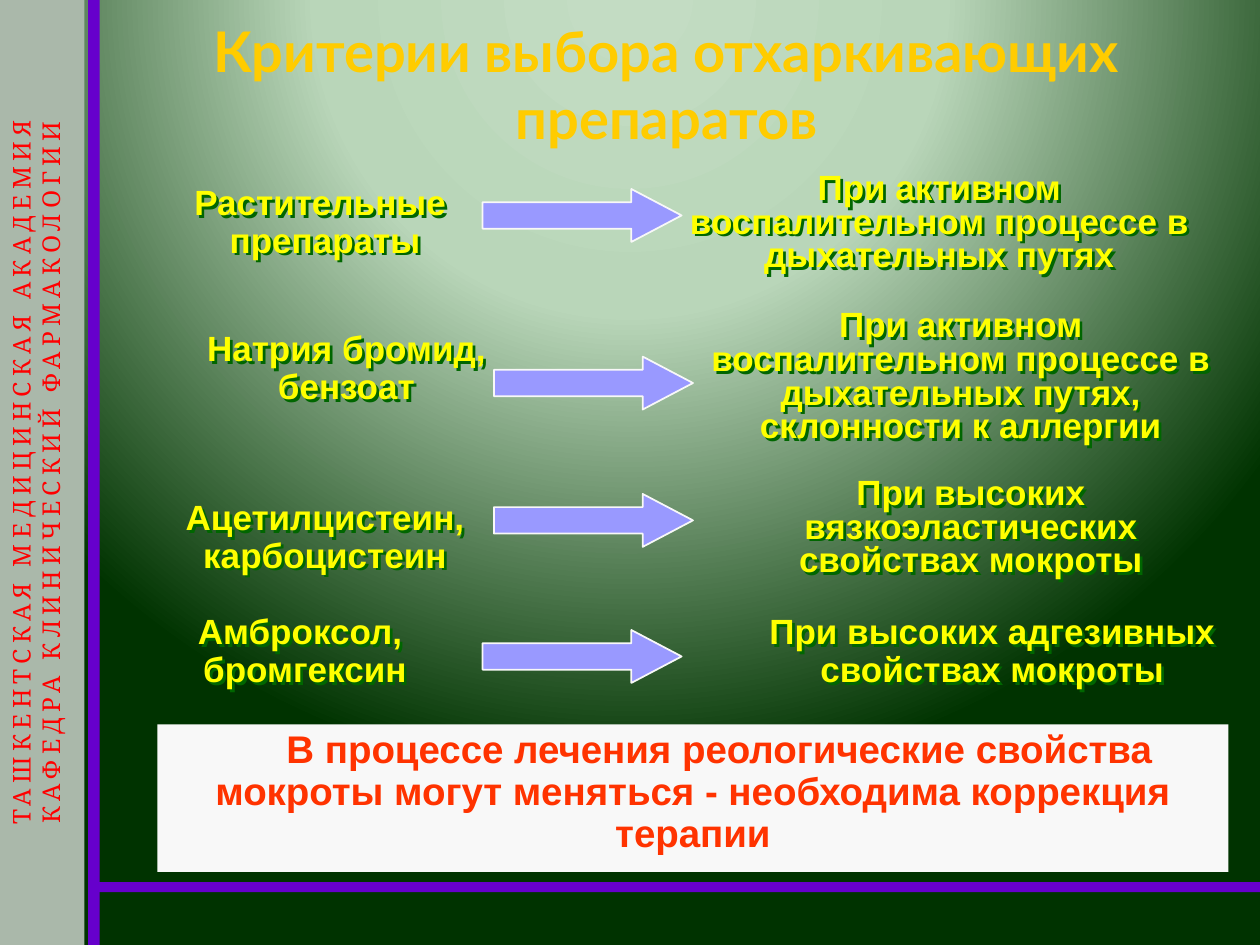
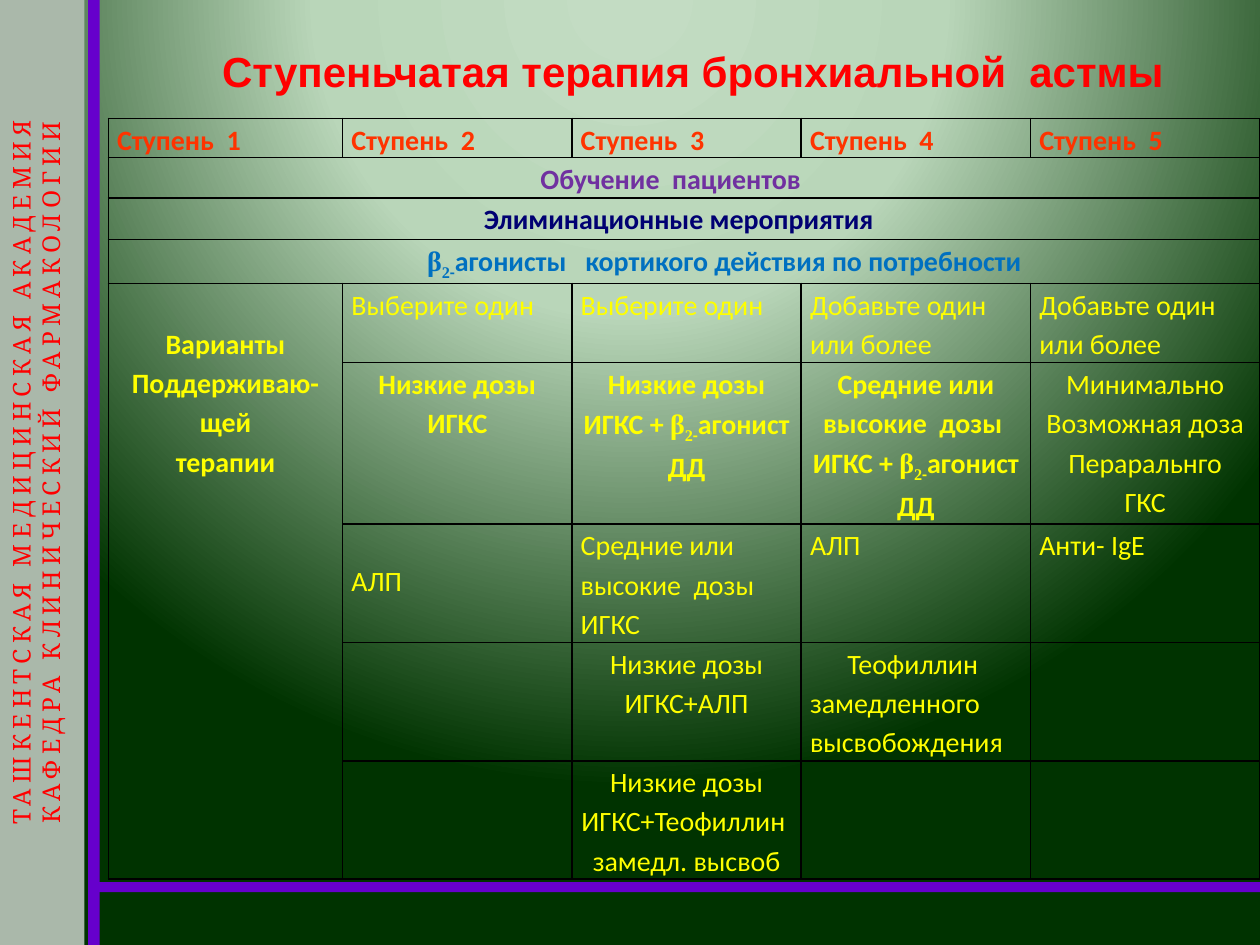
from dataclasses import dataclass

from lxml import etree
from pptx import Presentation
from pptx import util as u
from pptx.dml.color import RGBColor
from pptx.enum import shapes, text
from pptx.oxml import ns

PX = 9144
LEFT, CENTER = text.PP_ALIGN.LEFT, text.PP_ALIGN.CENTER
TOP, MIDDLE = text.MSO_ANCHOR.TOP, text.MSO_ANCHOR.MIDDLE


@dataclass(frozen=True)
class Theme:
    """Colours, fonts and type sizes used on every page."""
    glow: tuple = ((0, "C3DCC3"), (40, "B9D6B9"), (100, "003300"))
    band: str = "6600CC"
    side: str = "AAB8AA"
    red: str = "FF0000"
    outline: str = "F7F7FF"
    gold: str = "FFCC00"
    yellow: str = "FFFF00"
    shadow: str = "006600"
    arrow: str = "9999FF"
    paper: str = "F8F8F8"
    orange: str = "FF3300"
    purple: str = "7030A0"
    navy: str = "000072"
    blue: str = "0070C0"
    black: str = "000000"
    sans: str = "Arial"
    heading: str = "Lato"
    grid: str = "Calibri"
    serif: str = "Times New Roman"
    label: str = "Cambria"
    title_size: int = 32
    subtitle_size: int = 24
    note_size: int = 22
    body_size: int = 20
    cell_size: int = 16
    side_size: int = 14


THEME = Theme()
BETA = [("β", dict(font=THEME.serif)),
        ("2", dict(font=THEME.serif, baseline=-25)), ("-", dict(baseline=-25))]


def px(length):
    """Turn px into EMU."""
    return u.Emu(length * PX)


def node(parent, tag, **attributes):
    """Append a DrawingML element to a parent."""
    return etree.SubElement(parent, ns.qn("a:" + tag),
                            {key: str(value) for key, value in attributes.items()})


def solid(parent, color):
    """Append a solid fill to a parent."""
    node(node(parent, "solidFill"), "srgbClr", val=color)


def style_span(span, size, font, color, bold=False, baseline=0, spacing=0, outline=None):
    """Format one run of text."""
    span.font.size, span.font.name, span.font.bold = u.Pt(size), font, bold
    span.font.color.rgb = RGBColor.from_string(color)
    marks = span.font._element
    if baseline:
        marks.set("baseline", str(baseline * 1000))
    if spacing:
        marks.set("spc", str(spacing * 100))
    if outline:
        line = node(marks, "ln", w=11430)
        solid(line, outline)
        marks.insert(0, line)


def write(frame, paras, align=CENTER, first_align=None, line=None, around=0,
          left=0, indent=0, **look):
    """Fill a text frame with paragraphs of strings or of formatted spans."""
    for index, spans in enumerate(paras):
        para = frame.add_paragraph() if index else frame.paragraphs[0]
        para.alignment = first_align if first_align and not index else align
        if line:
            para.line_spacing = line
        if around:
            para.space_before = para.space_after = u.Pt(around)
        if left or indent:
            marks = para._p.get_or_add_pPr()
            marks.set("marL", str(px(left)))
            marks.set("indent", str(px(indent)))
        for words, changes in [(spans, {})] if isinstance(spans, str) else spans:
            for part, piece in enumerate(words.split("\n")):
                if part:
                    para.add_line_break()
                span = para.add_run()
                span.text = piece
                style_span(span, **{**look, **changes})


def add_text(page, box, paras, anchor=TOP, shadow=None, **look):
    """Place a wrapping text box, with a text shadow if a colour is given."""
    shape = page.shapes.add_textbox(*map(px, box))
    frame = shape.text_frame
    frame.word_wrap, frame.vertical_anchor = True, anchor
    if shadow:
        cast = node(node(shape._element.spPr, "effectLst"), "outerShdw",
                    dist=28000, dir=2700000, algn="ctr", rotWithShape=0)
        node(cast, "srgbClr", val=shadow)
    write(frame, paras, **look)


def add_block(page, kind, box, fill, line=None):
    """Place a filled preset shape without a shadow."""
    shape = page.shapes.add_shape(kind, *map(px, box))
    shape.shadow.inherit = False
    shape.fill.solid()
    shape.fill.fore_color.rgb = RGBColor.from_string(fill)
    if line:
        shape.line.color.rgb = RGBColor.from_string(line)
        shape.line.width = u.Pt(1)
    else:
        shape.line.fill.background()
    return shape


def paint_background(page):
    """Give the page a glow that falls from its top edge."""
    page.background.fill.gradient()
    gradient = next(page._element.iter(ns.qn("a:gradFill")))
    for child in list(gradient):
        gradient.remove(child)
    stops = node(gradient, "gsLst")
    for position, color in THEME.glow:
        node(node(stops, "gs", pos=position * 1000), "srgbClr", val=color)
    node(node(gradient, "path", **{"path": "circle"}), "fillToRect",
         l=50000, t=-80000, r=50000, b=180000)


def draw_bands(page):
    """Draw the upright and the level band."""
    for box in ((70, 0, 9, 750), (75, 700, 925, 8)):
        add_block(page, shapes.MSO_SHAPE.RECTANGLE, box, THEME.band)


def draw_sidebar(page, box):
    """Draw the department label that reads upwards."""
    frame = add_block(page, shapes.MSO_SHAPE.RECTANGLE, box, THEME.side).text_frame
    frame.vertical_anchor, frame.word_wrap = TOP, True
    frame._txBody.bodyPr.set("vert", "vert270")
    write(frame, ["ТАШКЕНТСКАЯ МЕДИЦИНСКАЯ АКАДЕМИЯ", "КАФЕДРА КЛИНИЧЕСКИЙ ФАРМАКОЛОГИИ"],
          size=THEME.side_size, font=THEME.label, color=THEME.red, spacing=3,
          outline=THEME.outline)


def new_page(deck):
    """Add a blank page with the shared background, bands and sidebar."""
    page = deck.slides.add_slide(deck.slide_layouts[6])
    paint_background(page)
    draw_bands(page)
    draw_sidebar(page, (0, 0, 67, 750))
    return page


def draw_choice(page, box, drug, arrow, case):
    """Draw a drug, an arrow and its indication inside one row."""
    x, y, width, height = box
    body = dict(size=THEME.body_size, font=THEME.sans, color=THEME.yellow, bold=True,
                around=4, shadow=THEME.shadow)
    words, dx, dy = drug
    add_text(page, (x + dx, y + dy, 250, 83), [words], line=0.9, **body)
    dx, dy = arrow
    pointer = add_block(page, shapes.MSO_SHAPE.RIGHT_ARROW,
                        (x + dx, y + dy, 158, 42), THEME.arrow, THEME.paper)
    pointer.adjustments[0], pointer.adjustments[1] = 0.5, 0.95
    words, dx, line = case
    add_text(page, (x + dx, y, 425, height), [words], line=line, **body)


def draw_note(page, box):
    """Draw the closing remark on a light panel."""
    frame = add_block(page, shapes.MSO_SHAPE.RECTANGLE, box, THEME.paper).text_frame
    frame.word_wrap, frame.vertical_anchor = True, TOP
    write(frame, ["В процессе лечения реологические свойства мокроты могут меняться - "
                  "необходима коррекция терапии"], line=0.9, around=4, indent=42,
          size=THEME.note_size, font=THEME.sans, color=THEME.orange, bold=True)


def criteria_page(deck):
    """Build the page on choosing expectorants."""
    page = new_page(deck)
    add_text(page, (125, 25, 808, 83), ["Критерии выбора отхаркивающих препаратов"],
             anchor=MIDDLE, size=THEME.title_size, font=THEME.heading,
             color=THEME.gold, bold=True)
    active = "При активном воспалительном процессе в дыхательных путях"
    choices = (
        (133, 100, ("Растительные \nпрепараты", 16, 9), (266, 17), (active, 416, 0.8)),
        (242, 117, ("Натрия бромид, бензоат", 33, 16), (275, 41),
         (active + ", склонности к аллергии", 433, 0.8)),
        (375, 100, ("Ацетилцистеин,\nкарбоцистеин", 16, 17), (275, 17),
         ("При высоких вязкоэластических свойствах мокроты", 441, 0.8)),
        (483, 67, ("Амброксол, \nбромгексин", 0, 0), (266, 17),
         ("При высоких адгезивных свойствах мокроты", 458, 0.9)))
    for y, height, drug, arrow, case in choices:
        draw_choice(page, (117, y, 883, height), drug, arrow, case)
    draw_note(page, (125, 575, 850, 117))


def format_cell(cell):
    """Clear a cell's fill, set its margins and rule its four sides."""
    cell.fill.background()
    cell.margin_left = cell.margin_right = px(7)
    cell.margin_top = cell.margin_bottom = 0
    marks = cell._tc.get_or_add_tcPr()
    for index, side in enumerate(("lnL", "lnR", "lnT", "lnB")):
        line = node(marks, side, w=12700)
        solid(line, THEME.black)
        marks.insert(index, line)


def step_cells():
    """List the table's texts as row, column, paragraphs and format."""
    strong = dict(bold=True, align=CENTER)
    middle = dict(align=CENTER)
    beta_agonist = [(" ", {})] + BETA + [("агонист", {})]
    more = ["Добавьте один", "или более"]
    heads = [(0, step, [f"Ступень  {step + 1}"], dict(color=THEME.orange, bold=True))
             for step in range(5)]
    return heads + [
        (1, 0, ["Обучение  пациентов"], dict(color=THEME.purple, bold=True, left=336)),
        (2, 0, ["Элиминационные мероприятия"], dict(color=THEME.navy, bold=True, left=291)),
        (3, 0, [BETA + [("агонисты   кортикого действия по потребности", {})]],
         dict(color=THEME.blue, bold=True, left=246)),
        (4, 0, ["Варианты", "Поддерживаю-щей", "терапии"], dict(strong, top=31)),
        (4, 1, ["Выберите один"], {}),
        (4, 2, ["Выберите один"], {}),
        (4, 3, more, {}),
        (4, 4, more, {}),
        (5, 1, ["Низкие дозы", "ИГКС"], strong),
        (5, 2, ["Низкие дозы", [("ИГКС +", {})] + beta_agonist, "ДД"], strong),
        (5, 3, [[("Средние или высокие  дозы  ИГКС +", {})] + beta_agonist, "ДД"], strong),
        (5, 4, ["Минимально", "Возможная доза", "Пераральнго", "ГКС"], middle),
        (6, 1, ["АЛП"], dict(top=28)),
        (6, 2, ["Средние или высокие  дозы  ИГКС"], {}),
        (6, 3, ["АЛП"], {}),
        (6, 4, ["Анти- IgЕ"], {}),
        (7, 2, ["Низкие дозы", "ИГКС+АЛП"], middle),
        (7, 3, ["Теофиллин ", "замедленного", "высвобождения"], dict(first_align=CENTER)),
        (8, 2, ["Низкие дозы", "ИГКС+Теофиллин ", "замедл. высвоб"], middle)]


def draw_steps(page, box):
    """Draw the table of treatment steps."""
    widths = [186] + [182] * 4
    heights = [31, 32, 33, 34, 63, 128, 94, 94, 94]
    table = page.shapes.add_table(len(heights), len(widths), *map(px, box)).table
    table.first_row = table.horz_banding = False
    for column, width in zip(table.columns, widths):
        column.width = px(width)
    for row, height in zip(table.rows, heights):
        row.height = px(height)
    for cell in table.iter_cells():
        format_cell(cell)
    for row in (1, 2, 3):
        table.cell(row, 0).merge(table.cell(row, 4))
    table.cell(4, 0).merge(table.cell(8, 0))
    base = dict(size=THEME.cell_size, font=THEME.grid, color=THEME.yellow,
                align=LEFT, line=1.15)
    for row, column, paras, changes in step_cells():
        cell = table.cell(row, column)
        look = {**base, **changes}
        cell.margin_top = px(look.pop("top", 0))
        write(cell.text_frame, paras, **look)


def steps_page(deck):
    """Build the page on stepwise asthma therapy."""
    page = new_page(deck)
    add_text(page, (121, 15, 858, 83), ["Ступеньчатая терапия бронхиальной  астмы"],
             anchor=MIDDLE, size=THEME.subtitle_size, font=THEME.sans,
             color=THEME.red, bold=True)
    draw_steps(page, (86, 94, 914, 603))


def main():
    """Build and save the deck."""
    deck = Presentation()
    deck.slide_width, deck.slide_height = px(1000), px(750)
    criteria_page(deck)
    steps_page(deck)
    deck.save("out.pptx")


if __name__ == "__main__":
    main()
